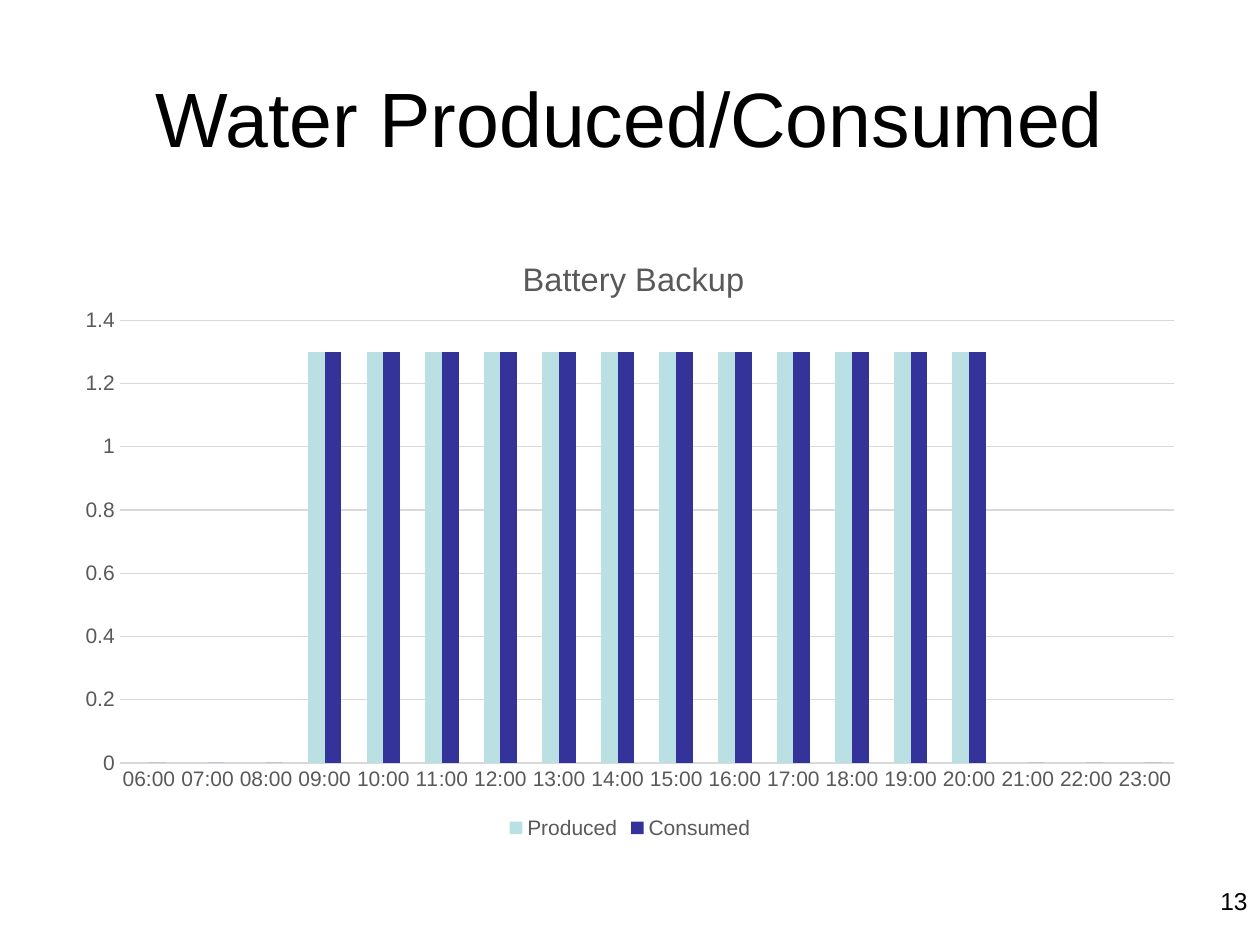
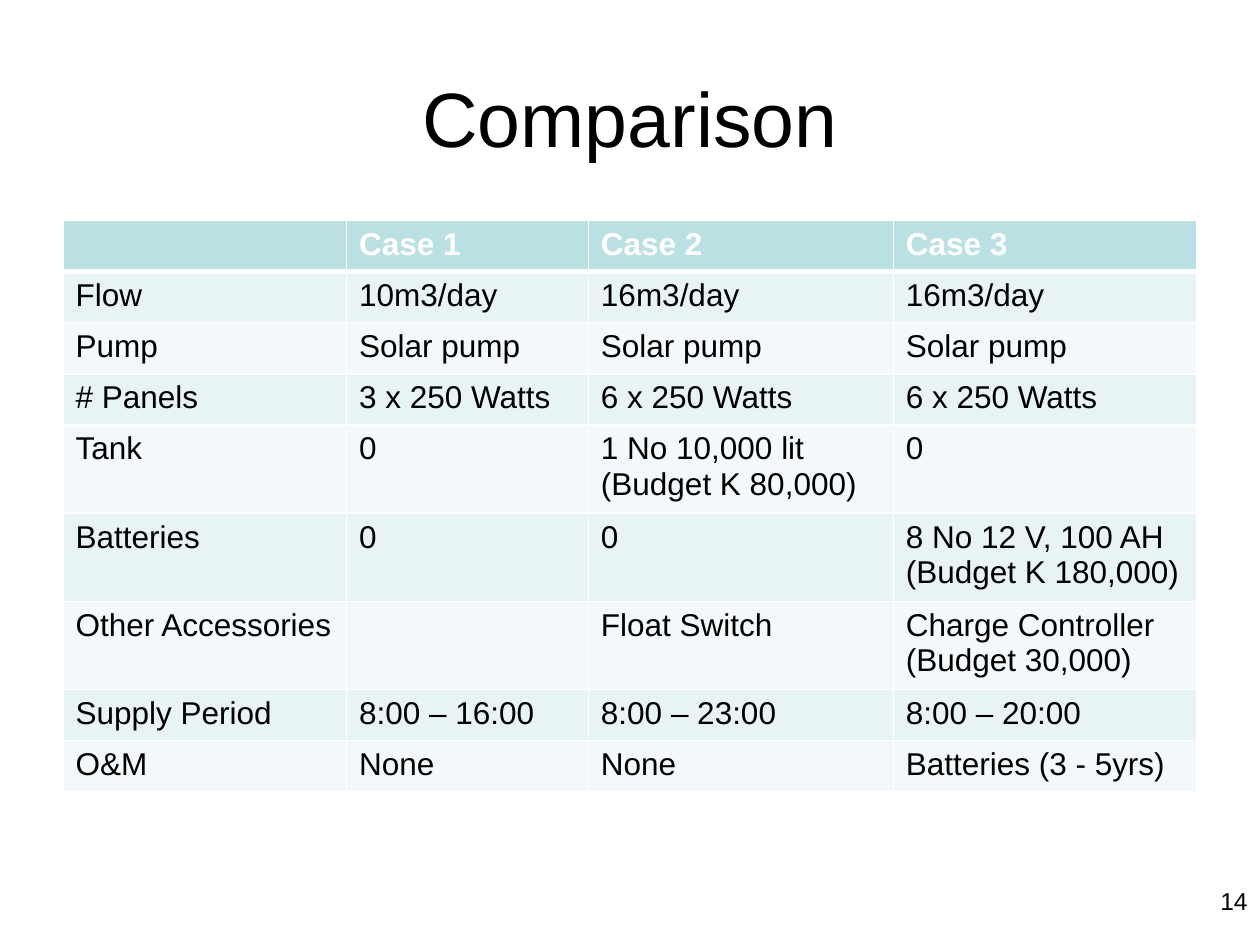
from lxml import etree
from pptx import Presentation
from pptx.chart.data import CategoryChartData
from pptx.dml.color import RGBColor
from pptx.enum.chart import XL_CHART_TYPE as ChartType
from pptx.enum.chart import XL_LEGEND_POSITION as LegendPosition
from pptx.enum.chart import XL_TICK_MARK as TickMark
from pptx.enum.text import MSO_ANCHOR as Anchor
from pptx.enum.text import PP_ALIGN as Align
from pptx.oxml import parse_xml
from pptx.oxml.ns import nsdecls, qn
from pptx.util import Inches, Pt

FONT = "Arial"
BLACK, WHITE, GREY, GRID = "000000", "FFFFFF", "595959", "D9D9D9"
AQUA, NAVY = "BBE0E3", "333399"
BANDS = ("E7F3F4", "F3F9FA")
TITLE_ONLY = 5
FIRST_PAGE = 13

HOURS = [f"{hour:02}:00" for hour in range(6, 24)]
HOURLY_FLOW = [1.3 if 9 <= hour <= 20 else 0 for hour in range(6, 24)]

PUMP = "Solar pump"
COMPARISON = [
    ("", "Case 1", "Case 2", "Case 3"),
    ("Flow", "10m3/day", "16m3/day", "16m3/day"),
    ("Pump", PUMP, PUMP, PUMP),
    ("# Panels", "3 x 250 Watts", "6 x 250 Watts", "6 x 250 Watts"),
    ("Tank", "0", "1 No 10,000 lit\n(Budget K 80,000)", "0"),
    ("Batteries", "0", "0", "8 No 12 V, 100 AH\n(Budget K 180,000)"),
    ("Other Accessories", "", "Float Switch", "Charge Controller (Budget 30,000)"),
    ("Supply Period", "8:00 – 16:00", "8:00 – 23:00", "8:00 – 20:00"),
    ("O&M", "None", "None", "Batteries (3 - 5yrs)"),
]


def rgb(hex_colour):
    return RGBColor.from_string(hex_colour)


def style_font(font, size, colour=BLACK, bold=False):
    font.name, font.size, font.bold = FONT, Pt(size), bold
    font.color.rgb = rgb(colour)


def write(frame, text, size=18, colour=BLACK, bold=False, align=Align.LEFT):
    """Fill a text frame, one paragraph per line of text."""
    frame.text = text
    for paragraph in frame.paragraphs:
        paragraph.alignment = align
        style_font(paragraph.font, size, colour, bold)
        for run in paragraph.runs:
            style_font(run.font, size, colour, bold)


def set_borders(cell, top=1, bottom=1):
    """Draw white cell borders; widths are in points."""
    widths = {"lnL": 1, "lnR": 1, "lnT": top, "lnB": bottom}
    properties = cell._tc.get_or_add_tcPr()
    for position, (side, width) in enumerate(widths.items()):
        properties.insert(position, parse_xml(
            f'<a:{side} {nsdecls("a")} w="{Pt(width)}"><a:solidFill>'
            f'<a:srgbClr val="{WHITE}"/></a:solidFill></a:{side}>'))


def place(part, **fractions):
    """Give a chart part a manual layout in fractions of the chart."""
    layout = part.find(qn("c:layout"))
    if layout is None:
        layout = etree.Element(qn("c:layout"))
        text = part.find(qn("c:tx"))
        if text is None:
            part.insert(0, layout)
        else:
            text.addnext(layout)
    for child in list(layout):
        layout.remove(child)
    manual = etree.SubElement(layout, qn("c:manualLayout"))
    settings = {"xMode": "edge", "yMode": "edge", **fractions}
    if "w" in fractions:
        settings = {"layoutTarget": "inner", **settings}
    for tag, value in settings.items():
        etree.SubElement(manual, qn(f"c:{tag}")).set("val", str(value))


class Deck:
    def __init__(self):
        self.presentation = Presentation()
        self.presentation.slide_width = Inches(10)
        self.presentation.slide_height = Inches(7.5)
        self.page = FIRST_PAGE
        self.slide = None

    def start_slide(self, heading):
        layout = self.presentation.slide_layouts[TITLE_ONLY]
        self.slide = self.presentation.slides.add_slide(layout)
        title = self.slide.shapes.title
        title.left, title.top = Inches(0.5), Inches(0.3)
        title.width, title.height = Inches(9), Inches(1.25)
        title.text_frame.vertical_anchor = Anchor.MIDDLE
        write(title.text_frame, heading, size=44, align=Align.CENTER)
        self.page_number()

    def page_number(self):
        number = self.slide.shapes.add_textbox(
            Inches(7.67), Inches(6.98), Inches(2.33), Inches(0.52))
        number.text_frame.word_wrap = True
        write(number.text_frame, str(self.page), size=14, align=Align.RIGHT)
        self.page += 1

    def column_chart(self, heading, categories, series):
        """Add clustered columns; series holds (name, values, colour)."""
        data = CategoryChartData()
        data.categories = categories
        for name, values, _ in series:
            data.add_series(name, values)
        chart = self.slide.shapes.add_chart(
            ChartType.COLUMN_CLUSTERED, Inches(0.5), Inches(1.75),
            Inches(9), Inches(4.95), data).chart
        style_font(chart.font, 10)
        write(chart.chart_title.text_frame, heading, size=18.6, colour=GREY,
              align=Align.CENTER)
        chart.chart_title.include_in_layout = False
        place(chart.chart_title._element, x=0.4, y=0.05)
        place(chart._chartSpace.chart.plotArea, x=0.05, y=0.16, w=0.93, h=0.71)

        plot = chart.plots[0]
        plot.gap_width, plot.overlap = 150, 0
        plot.vary_by_categories = False
        for columns, (_, _, colour) in zip(plot.series, series):
            columns.format.fill.solid()
            columns.format.fill.fore_color.rgb = rgb(colour)

        hours, flow = chart.category_axis, chart.value_axis
        for axis in (hours, flow):
            axis.major_tick_mark = axis.minor_tick_mark = TickMark.NONE
            style_font(axis.tick_labels.font, 12, GREY)
        flow.minimum_scale, flow.maximum_scale, flow.major_unit = 0, 1.4, 0.2
        flow.format.line.fill.background()
        for line in (hours.format.line, flow.major_gridlines.format.line):
            line.color.rgb = rgb(GRID)
            line.width = Pt(0.75)

        chart.has_legend = True
        chart.legend.position = LegendPosition.BOTTOM
        chart.legend.include_in_layout = False
        style_font(chart.legend.font, 12, GREY)

    def table(self, rows, widths):
        height = Inches(3.65)
        grid = self.slide.shapes.add_table(
            len(rows), len(widths), Inches(0.5), Inches(1.75),
            Inches(sum(widths)), height).table
        for column, width in zip(grid.columns, widths):
            column.width = Inches(width)
        for index, texts in enumerate(rows):
            header = index == 0
            grid.rows[index].height = height // len(rows)
            for cell, text in zip(grid.rows[index].cells, texts):
                write(cell.text_frame, text, bold=header,
                      colour=WHITE if header else BLACK)
                cell.fill.solid()
                cell.fill.fore_color.rgb = rgb(
                    AQUA if header else BANDS[(index - 1) % 2])
                set_borders(cell, top=3 if index == 1 else 1,
                            bottom=3 if header else 1)


def main():
    deck = Deck()
    deck.start_slide("Water Produced/Consumed")
    deck.column_chart("Battery Backup", HOURS, [
        ("Produced", HOURLY_FLOW, AQUA),
        ("Consumed", HOURLY_FLOW, NAVY),
    ])
    deck.start_slide("Comparison")
    deck.table(COMPARISON, widths=(2.25, 1.92, 2.42, 2.41))
    deck.presentation.save("out.pptx")


if __name__ == "__main__":
    main()
